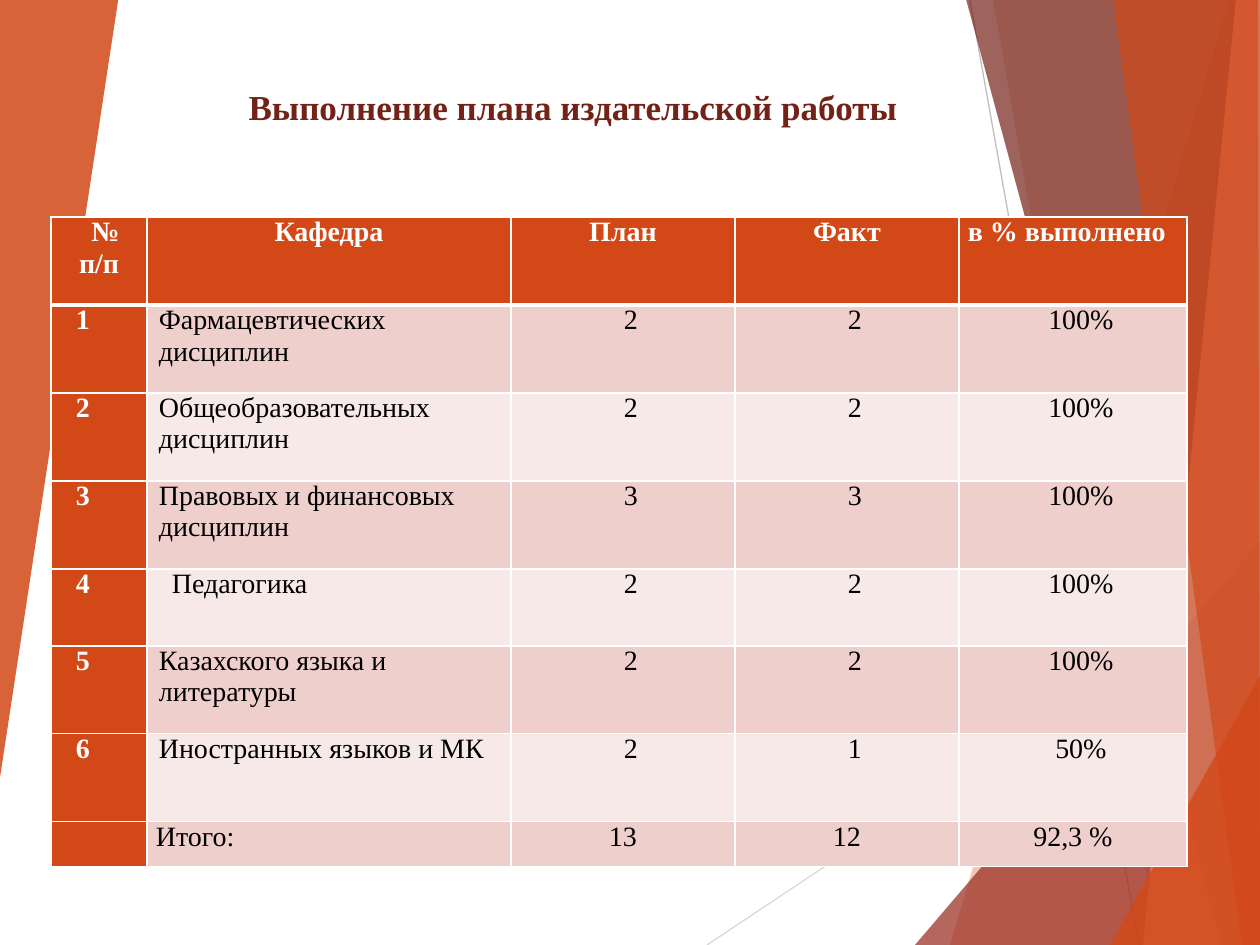
from dataclasses import dataclass

from lxml import etree
from pptx import Presentation
from pptx import util as u
from pptx.dml.color import RGBColor
from pptx.enum import shapes, text
from pptx.oxml.ns import qn

# Content
TITLE = "Выполнение плана издательской работы"
HEADER = ["№ п/п", "Кафедра", "План", "Факт", "в % выполнено"]
DEPARTMENTS = [
    ("1", "Фармацевтических дисциплин", "2", "2", "100%"),
    ("2", "Общеобразовательных дисциплин", "2", "2", "100%"),
    ("3", "Правовых и финансовых дисциплин", "3", "3", "100%"),
    ("4", "Педагогика", "2", "2", "100%"),
    ("5", "Казахского языка и литературы", "2", "2", "100%"),
    ("6", "Иностранных языков и МК", "2", "1", "50%"),
]
TOTAL = ["", "Итого:", "13", "12", "92,3 %"]
ROWS = [HEADER, *DEPARTMENTS, TOTAL]


@dataclass(frozen=True)
class Theme:
    font: str = "Times New Roman"
    title_size: int = 20
    table_size: int = 16
    accent: str = "D34817"
    brick: str = "9B2D1F"
    dark: str = "742217"
    peach: str = "EF8C6A"
    white: str = "FFFFFF"
    black: str = "000000"
    bands: tuple = ("EFCFCC", "F7E9E8")


THEME = Theme()

# Layout, in px
PX = u.Inches(1) / 126
WIDTH, HEIGHT = 1260, 945
TITLE_BOX = (229, 79, 688, 55)
TABLE_LEFT, TABLE_TOP = 51, 217
COLUMN_WIDTHS = [96, 364, 224, 224, 228]
ROW_HEIGHTS = [88, 88, 88, 88, 77, 88, 88, 45]
CELL_MARGIN, TEXT_INDENT, FIRST_LINE = 9, 3, 13

# Background: (start, end, colour) and (colour, opacity %, corners)
RAYS = [((707, 945), (1261, 576), "D9D9D9"), ((970, 0), (1139, 945), "BFBFBF")]
FACETS = [
    (THEME.accent, 30, [(1229, 0), (950, 945), (1261, 945), (1261, 0)]),
    (THEME.accent, 20, [(993, -1), (1158, 945), (1261, 945), (1261, -1)]),
    (THEME.brick, 72, [(915, 945), (1260, 541), (1261, 945)]),
    (THEME.dark, 70, [(966, -1), (1222, 945), (1261, 945), (1261, -1)]),
    (THEME.peach, 70, [(1236, -1), (1143, 945), (1261, 945), (1260, -1)]),
    (THEME.accent, 65, [(1113, -1), (1242, 945), (1260, 945), (1258, -1)]),
    (THEME.accent, 80, [(1110, 945), (1261, 674), (1261, 945)]),
    (THEME.accent, 85, [(-1, -1), (118, -1), (118, 1), (-1, 784)]),
]


def px(value):
    return u.Emu(round(value * PX))


def paint(fill, colour):
    fill.solid()
    fill.fore_color.rgb = RGBColor.from_string(colour)


def style_runs(paragraph, size, colour, bold):
    for run in paragraph.runs:
        run.font.name = THEME.font
        run.font.size = u.Pt(size)
        run.font.bold = bold
        run.font.color.rgb = RGBColor.from_string(colour)


def add_ray(slide, start, end, colour):
    ray = slide.shapes.add_connector(
        shapes.MSO_CONNECTOR.STRAIGHT, *map(px, start + end))
    ray.line.color.rgb = RGBColor.from_string(colour)
    ray.line.width = u.Pt(0.75)
    etree.SubElement(ray._element.spPr, qn("a:effectLst"))


def add_facet(slide, colour, opacity, corners):
    builder = slide.shapes.build_freeform(*corners[0], scale=PX)
    builder.add_line_segments(corners[1:], close=True)
    facet = builder.convert_to_shape()
    facet.shadow.inherit = False
    facet.line.fill.background()
    paint(facet.fill, colour)
    colour_element = facet._element.spPr.find(".//" + qn("a:srgbClr"))
    etree.SubElement(colour_element, qn("a:alpha"), val=str(opacity * 1000))


def add_title(slide):
    frame = slide.shapes.add_textbox(*map(px, TITLE_BOX)).text_frame
    frame.word_wrap = False
    frame.auto_size = text.MSO_AUTO_SIZE.SHAPE_TO_FIT_TEXT
    frame.vertical_anchor = text.MSO_ANCHOR.MIDDLE
    frame.text = TITLE
    paragraph = frame.paragraphs[0]
    paragraph.alignment = text.PP_ALIGN.CENTER
    style_runs(paragraph, THEME.title_size, THEME.dark, True)


def set_borders(cell, top, bottom):
    properties = cell._tc.get_or_add_tcPr()
    for side, points in (("L", 1), ("R", 1), ("T", top), ("B", bottom)):
        border = etree.SubElement(
            properties, qn("a:ln" + side), w=str(u.Pt(points)))
        fill = etree.SubElement(border, qn("a:solidFill"))
        etree.SubElement(fill, qn("a:srgbClr"), val=THEME.white)


def indents(row, column):
    """Left indent and first-line indent of a cell."""
    if row == 0:
        return 0, FIRST_LINE if column == 0 else 0
    if row == len(ROWS) - 1:
        return 0, 0
    flush_name = column == 1 and ROWS[row][1] != "Педагогика"
    return TEXT_INDENT, 0 if flush_name else FIRST_LINE


def fill_cell(cell, row, column):
    is_head = row == 0 or column == 0
    cell.margin_left = cell.margin_right = px(CELL_MARGIN)
    cell.margin_top = cell.margin_bottom = 0
    set_borders(cell, 3 if row == 1 else 1, 3 if row == 0 else 1)
    paint(cell.fill, THEME.accent if is_head else THEME.bands[(row - 1) % 2])
    cell.text_frame.text = ROWS[row][column]
    paragraph = cell.text_frame.paragraphs[0]
    left, first = indents(row, column)
    properties = paragraph._p.get_or_add_pPr()
    properties.set("marL", str(px(left)))
    properties.set("indent", str(px(first)))
    is_left = (row == 0 and column == 4) or (row > 0 and column < 2)
    paragraph.alignment = (
        text.PP_ALIGN.LEFT if is_left else text.PP_ALIGN.CENTER)
    style_runs(paragraph, THEME.table_size,
               THEME.white if is_head else THEME.black, is_head)


def add_plan_table(slide):
    box = (TABLE_LEFT, TABLE_TOP, sum(COLUMN_WIDTHS), sum(ROW_HEIGHTS))
    table = slide.shapes.add_table(
        len(ROWS), len(HEADER), *map(px, box)).table
    for column, width in zip(table.columns, COLUMN_WIDTHS):
        column.width = px(width)
    for row, height in zip(table.rows, ROW_HEIGHTS):
        row.height = px(height)
    for row in range(len(ROWS)):
        for column in range(len(HEADER)):
            fill_cell(table.cell(row, column), row, column)


def main():
    presentation = Presentation()
    presentation.slide_width, presentation.slide_height = px(WIDTH), px(HEIGHT)
    slide = presentation.slides.add_slide(presentation.slide_layouts[6])
    for ray in RAYS:
        add_ray(slide, *ray)
    for facet in FACETS:
        add_facet(slide, *facet)
    add_title(slide)
    add_plan_table(slide)
    presentation.save("out.pptx")


if __name__ == "__main__":
    main()
